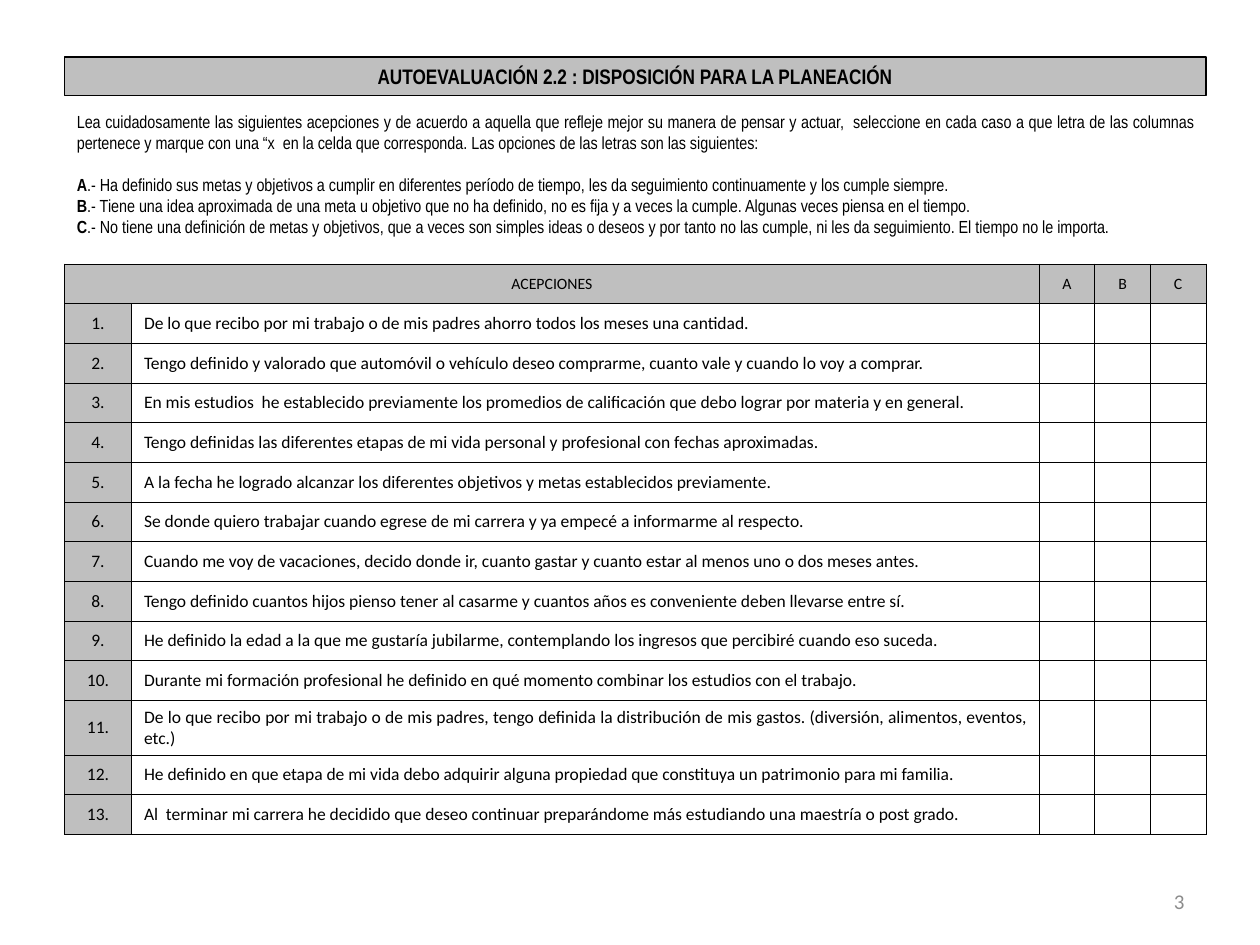
import lxml.etree
import pptx
import pptx.dml.color
import pptx.enum.text
import pptx.oxml.ns
import pptx.util

Cm = pptx.util.Cm
Pt = pptx.util.Pt
ALIGN = pptx.enum.text.PP_ALIGN
MIDDLE = pptx.enum.text.MSO_ANCHOR.MIDDLE
BLACK = pptx.dml.color.RGBColor(0x00, 0x00, 0x00)
SILVER = pptx.dml.color.RGBColor(0xBF, 0xBF, 0xBF)
GREY = pptx.dml.color.RGBColor(0x8C, 0x8C, 0x8C)
NARROW = "Arial Narrow"
BODY = "Calibri"

TITLE = "AUTOEVALUACIÓN 2.2 : DISPOSICIÓN PARA LA PLANEACIÓN"
INSTRUCTIONS = (
    "Lea cuidadosamente las siguientes acepciones y de acuerdo a aquella que refleje mejor "
    "su manera de pensar y actuar,  seleccione en cada caso a que letra de las columnas "
    "pertenece y marque con una “x  en la celda que corresponda. "
    "Las opciones de las letras son las siguientes:"
)
OPTIONS = {
    "A": "Ha definido sus metas y objetivos a cumplir en diferentes período de tiempo, "
         "les da seguimiento continuamente y los cumple siempre. ",
    "B": "Tiene una idea aproximada de una meta u objetivo que no ha definido, no es fija "
         "y a veces la cumple. Algunas veces piensa en el tiempo.",
    "C": "No tiene una definición de metas y objetivos, que a veces son simples ideas o deseos "
         "y por tanto no las cumple, ni les da seguimiento. El tiempo no le importa.",
}
HANGING_INDENTS = {"B": Cm(0.74), "C": Cm(0.5)}
STATEMENTS = [
    "De lo que recibo por mi trabajo o de mis padres ahorro todos los meses una cantidad.",
    "Tengo definido y valorado que automóvil o vehículo deseo comprarme, cuanto vale y cuando lo voy a comprar.",
    "En mis estudios  he establecido previamente los promedios de calificación que debo lograr por materia y en general.",
    "Tengo definidas las diferentes etapas de mi vida personal y profesional con fechas aproximadas.",
    "A la fecha he logrado alcanzar los diferentes objetivos y metas establecidos previamente.",
    "Se donde quiero trabajar cuando egrese de mi carrera y ya empecé a informarme al respecto.",
    "Cuando me voy de vacaciones, decido donde ir, cuanto gastar y cuanto estar al menos uno o dos meses antes.",
    "Tengo definido cuantos hijos pienso tener al casarme y cuantos años es conveniente deben llevarse entre sí.",
    "He definido la edad a la que me gustaría jubilarme, contemplando los ingresos que percibiré cuando eso suceda.",
    "Durante mi formación profesional he definido en qué momento combinar los estudios con el trabajo.",
    "De lo que recibo por mi trabajo o de mis padres, tengo definida la distribución de mis gastos. "
    "(diversión, alimentos, eventos, etc.)",
    "He definido en que etapa de mi vida debo adquirir alguna propiedad que constituya un patrimonio para mi familia.",
    "Al  terminar mi carrera he decidido que deseo continuar preparándome más estudiando una maestría o post grado.",
]


def add_run(paragraph, text, size, font, color=BLACK, bold=False):
    run = paragraph.add_run()
    run.text = text
    run.font.size = Pt(size)
    run.font.name = font
    run.font.bold = bold
    run.font.color.rgb = color


def add_text_box(slide, left, top, width, height):
    frame = slide.shapes.add_textbox(left, top, width, height).text_frame
    frame.word_wrap = True
    frame.vertical_anchor = MIDDLE
    return frame


def place_title(slide, left, top, width, height):
    title = slide.shapes.title
    title.left, title.top, title.width, title.height = left, top, width, height
    title.fill.solid()
    title.fill.fore_color.rgb = SILVER
    title.line.color.rgb = BLACK
    title.line.width = Pt(0.75)
    frame = title.text_frame
    frame.auto_size = pptx.enum.text.MSO_AUTO_SIZE.NONE
    frame.vertical_anchor = MIDDLE
    paragraph = frame.paragraphs[0]
    paragraph.alignment = ALIGN.CENTER
    add_run(paragraph, TITLE, 12, NARROW, bold=True)


def add_instructions(slide, left, top, width, height):
    frame = add_text_box(slide, left, top, width, height)
    paragraph = frame.paragraphs[0]
    paragraph.alignment = ALIGN.JUSTIFY
    paragraph.space_after = Pt(12)
    add_run(paragraph, INSTRUCTIONS, 10, NARROW)
    for letter, meaning in OPTIONS.items():
        paragraph = frame.add_paragraph()
        paragraph.alignment = ALIGN.JUSTIFY
        if letter in HANGING_INDENTS:
            indent = HANGING_INDENTS[letter]
            properties = paragraph._p.get_or_add_pPr()
            properties.set("marL", str(indent))
            properties.set("indent", str(-indent))
        add_run(paragraph, letter, 10, NARROW, bold=True)
        add_run(paragraph, ".- " + meaning, 10, NARROW)


def add_borders(cell):
    properties = cell._tc.get_or_add_tcPr()
    for position, side in enumerate(("lnL", "lnR", "lnT", "lnB")):
        line = lxml.etree.Element(pptx.oxml.ns.qn("a:" + side), w=str(Pt(0.5)))
        fill = lxml.etree.SubElement(line, pptx.oxml.ns.qn("a:solidFill"))
        lxml.etree.SubElement(fill, pptx.oxml.ns.qn("a:srgbClr"), val=str(BLACK))
        properties.insert(position, line)


def format_cell(cell, text="", size=10, alignment=ALIGN.CENTER, shaded=False):
    cell.vertical_anchor = MIDDLE
    if shaded:
        cell.fill.solid()
        cell.fill.fore_color.rgb = SILVER
    else:
        cell.fill.background()
    add_borders(cell)
    paragraph = cell.text_frame.paragraphs[0]
    paragraph.alignment = alignment
    if text:
        add_run(paragraph, text, size, BODY)
    else:
        lxml.etree.SubElement(paragraph._p, pptx.oxml.ns.qn("a:endParaRPr"), sz=str(size * 100))
    return paragraph


def add_questionnaire(slide, left, top, width, row_height):
    row_count = len(STATEMENTS) + 1
    shape = slide.shapes.add_table(row_count, 2 + len(OPTIONS), left, top, width, row_height * row_count)
    table = shape.table
    table.first_row = False
    table.horz_banding = False
    number_width, option_width = Cm(1.35), Cm(1.12)
    statement_width = width - number_width - option_width * len(OPTIONS)
    widths = [number_width, statement_width] + [option_width] * len(OPTIONS)
    for column, column_width in zip(table.columns, widths):
        column.width = column_width
    for row in table.rows:
        row.height = row_height

    table.cell(0, 0).merge(table.cell(0, 1))
    for column, heading in enumerate(["ACEPCIONES", "", *OPTIONS]):
        paragraph = format_cell(table.cell(0, column), heading, 9, shaded=True)
        paragraph.space_before = Pt(1.8)
    for number, statement in enumerate(STATEMENTS, 1):
        format_cell(table.cell(number, 0), f"{number}.", shaded=True)
        format_cell(table.cell(number, 1), statement, alignment=ALIGN.JUSTIFY)
        for column in range(2, len(widths)):
            format_cell(table.cell(number, column))


def add_page_number(slide, left, top, width, height):
    paragraph = add_text_box(slide, left, top, width, height).paragraphs[0]
    paragraph.alignment = ALIGN.RIGHT
    add_run(paragraph, "3", 12, BODY, GREY)


def main():
    presentation = pptx.Presentation()
    presentation.slide_width, presentation.slide_height = Cm(25.4), Cm(19.05)
    slide = presentation.slides.add_slide(presentation.slide_layouts[5])
    left, width = Cm(1.3), Cm(23.01)
    place_title(slide, left, Cm(1.15), width, Cm(0.78))
    add_instructions(slide, left, Cm(2.1), width, Cm(2.82))
    add_questionnaire(slide, left, Cm(5.32), width, Cm(0.8))
    add_page_number(slide, Cm(18.2), Cm(17.66), Cm(5.93), Cm(1.01))
    presentation.save("out.pptx")


if __name__ == "__main__":
    main()
